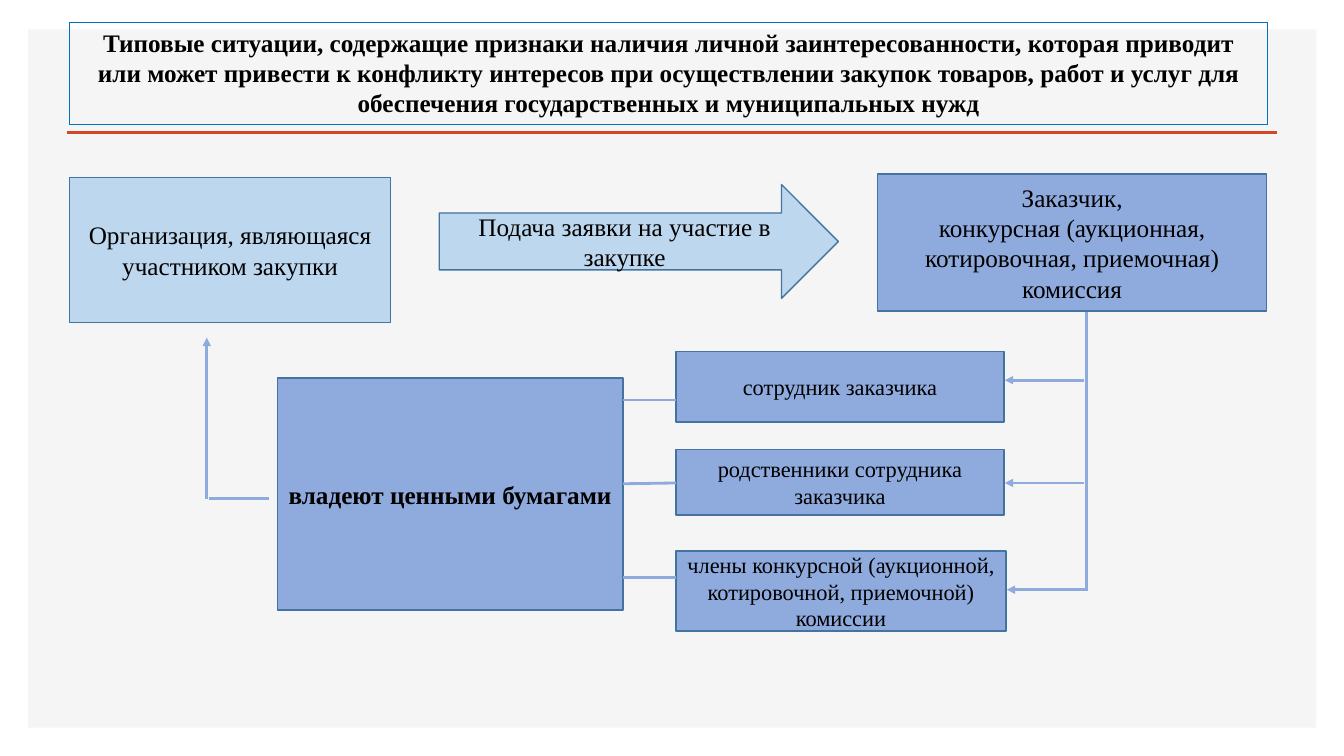
from dataclasses import dataclass

from lxml import etree
from pptx import Presentation
from pptx.dml.color import RGBColor
from pptx.enum.shapes import MSO_CONNECTOR, MSO_SHAPE
from pptx.enum.text import MSO_ANCHOR, MSO_AUTO_SIZE, PP_ALIGN
from pptx.oxml.ns import qn
from pptx.slide import Slide
from pptx.util import Cm, Pt

RECT = MSO_SHAPE.RECTANGLE
RIGHT_ARROW = MSO_SHAPE.RIGHT_ARROW
STRAIGHT = MSO_CONNECTOR.STRAIGHT
TOP = MSO_ANCHOR.TOP
MIDDLE = MSO_ANCHOR.MIDDLE
CENTER = PP_ALIGN.CENTER
GROW = MSO_AUTO_SIZE.SHAPE_TO_FIT_TEXT


@dataclass(frozen=True)
class Theme:
    font: str = "Times New Roman"
    text: str = "000000"
    panel: str = "F5F5F5"
    rule: str = "D24726"
    light: str = "BDD7EE"
    blue: str = "8FAADC"
    border: str = "43739E"
    title_border: str = "0070C0"
    body: float = 18
    small: float = 16
    thin: float = 0.75
    outline: float = 1
    stroke: float = 2


THEME = Theme()


@dataclass(frozen=True)
class Box:
    left: float
    top: float
    width: float
    height: float
    paragraphs: tuple[str, ...] = ()
    fill: str | None = THEME.blue
    border: str | None = THEME.border
    border_width: float = THEME.outline
    size: float = THEME.body
    bold: bool = False
    kind: int = RECT
    anchor: int = MIDDLE
    grow: bool = False


@dataclass(frozen=True)
class Link:
    x1: float
    y1: float
    x2: float
    y2: float
    arrow: bool = False
    color: str = THEME.blue


PEOPLE_LEFT = 17.04
OWNERS_RIGHT = 15.7
TRUNK_X = 27.38
CORNER_Y = 12.57

PANEL = Box(0.71, 0.74, 32.46, 17.6, fill=THEME.panel, border=None)
RULE = Link(1.68, 3.33, 32.18, 3.33, color=THEME.rule)

TITLE = Box(
    1.75, 0.56, 30.2, 2.57,
    ("Типовые ситуации, содержащие признаки наличия личной заинтересованности, "
     "которая приводит или может привести к конфликту интересов при осуществлении "
     "закупок товаров, работ и услуг для обеспечения государственных и "
     "муниципальных нужд",),
    fill=None, border=THEME.title_border, border_width=THEME.thin,
    bold=True, anchor=TOP, grow=True,
)

BOXES = (
    Box(1.75, 4.47, 8.1, 3.66, ("Организация, являющаяся участником закупки",),
        fill=THEME.light),
    Box(11.07, 4.65, 10.06, 2.87, ("Подача заявки на участие в закупке",),
        fill=THEME.light, kind=RIGHT_ARROW),
    Box(22.12, 4.39, 9.8, 3.45,
        ("Заказчик,", "конкурсная (аукционная, котировочная, приемочная) комиссия")),
    Box(PEOPLE_LEFT, 8.86, 8.26, 1.78, ("сотрудник заказчика",), size=THEME.small),
    Box(PEOPLE_LEFT, 11.33, 8.26, 1.65, ("родственники сотрудника заказчика",),
        size=THEME.small),
    Box(PEOPLE_LEFT, 13.89, 8.31, 2.01,
        ("члены конкурсной (аукционной, котировочной, приемочной) комиссии",),
        size=THEME.small),
    Box(6.99, 9.53, 8.71, 5.84, ("владеют ценными бумагами",), bold=True),
    TITLE,
)

LINKS = (
    Link(TRUNK_X, 7.85, TRUNK_X, 14.88),
    Link(27.31, 9.58, 25.32, 9.58, arrow=True),
    Link(27.31, 12.17, 25.32, 12.17, arrow=True),
    Link(27.36, 14.86, 25.37, 14.86, arrow=True),
    Link(6.78, CORNER_Y, 5.26, CORNER_Y),
    Link(5.21, CORNER_Y, 5.21, 8.51, arrow=True),
    Link(PEOPLE_LEFT, 10.08, OWNERS_RIGHT, 10.08),
    Link(PEOPLE_LEFT, 12.17, OWNERS_RIGHT, 12.19),
    Link(PEOPLE_LEFT, 14.55, OWNERS_RIGHT, 14.55),
)


def rgb(color: str) -> RGBColor:
    return RGBColor.from_string(color)


def draw_box(s: Slide, box: Box) -> None:
    sp = s.shapes.add_shape(
        box.kind, Cm(box.left), Cm(box.top), Cm(box.width), Cm(box.height))
    sp.shadow.inherit = False
    if box.fill:
        sp.fill.solid()
        sp.fill.fore_color.rgb = rgb(box.fill)
    else:
        sp.fill.background()
    if box.border:
        sp.line.color.rgb = rgb(box.border)
        sp.line.width = Pt(box.border_width)
    else:
        sp.line.fill.background()
    tf = sp.text_frame
    tf.word_wrap = True
    tf.vertical_anchor = box.anchor
    if box.grow:
        tf.auto_size = GROW
    for i, text in enumerate(box.paragraphs):
        p = tf.add_paragraph() if i else tf.paragraphs[0]
        p.alignment = CENTER
        r = p.add_run()
        r.text = text
        r.font.name = THEME.font
        r.font.size = Pt(box.size)
        r.font.bold = box.bold
        r.font.color.rgb = rgb(THEME.text)


def draw_link(s: Slide, link: Link) -> None:
    cxn = s.shapes.add_connector(
        STRAIGHT, Cm(link.x1), Cm(link.y1), Cm(link.x2), Cm(link.y2))
    cxn.line.color.rgb = rgb(link.color)
    cxn.line.width = Pt(THEME.stroke)
    if link.arrow:
        ln = cxn.line._get_or_add_ln()
        etree.SubElement(ln, qn("a:tailEnd"), type="triangle")
    etree.SubElement(cxn._element.spPr, qn("a:effectLst"))


def main() -> None:
    prs = Presentation()
    prs.slide_width, prs.slide_height = Cm(33.87), Cm(19.05)
    s = prs.slides.add_slide(prs.slide_layouts[6])
    draw_box(s, PANEL)
    draw_link(s, RULE)
    for box in BOXES:
        draw_box(s, box)
    for link in LINKS:
        draw_link(s, link)
    prs.save("out.pptx")


if __name__ == "__main__":
    main()
